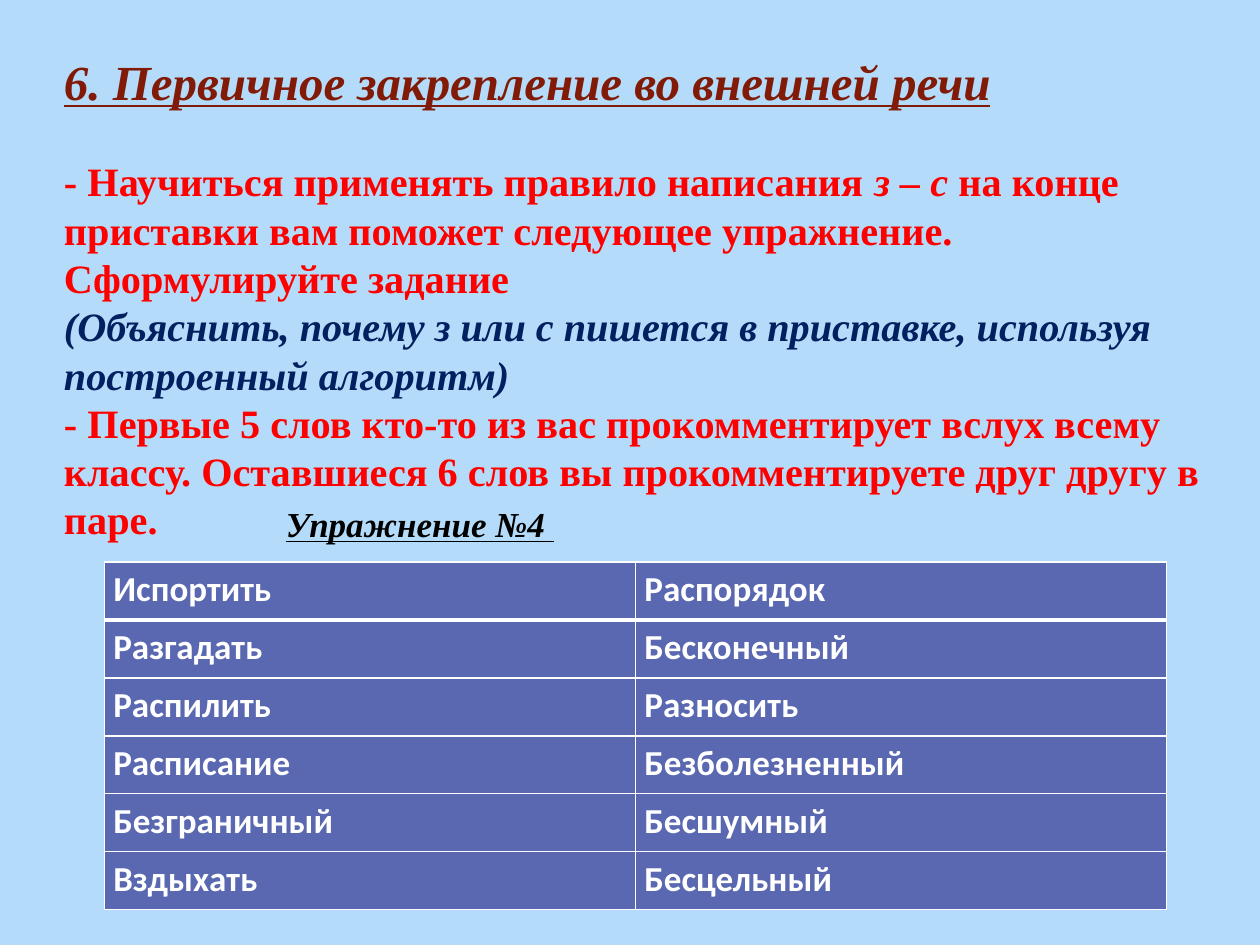
"""Build the slide on practising the spelling of prefixes ending in з and с."""
from typing import NamedTuple

from lxml import etree
from pptx import Presentation
from pptx.dml.color import RGBColor
from pptx.enum import text
from pptx.oxml.ns import qn
from pptx.util import Inches, Pt

COLORS = {
    "background": "B4DCFA",
    "heading": "821A08",
    "speech": "FF0000",
    "answer": "002060",
    "label": "000000",
    "cell": "5968B0",
    "white": "FFFFFF",
}
SERIF = "Times New Roman"


class Passage(NamedTuple):
    phrases: tuple[str, ...]
    color: str
    size: int = 23
    italic: bool = False
    underline: bool = False
    after: float = 0


class Box(NamedTuple):
    left: float
    top: float
    width: float
    height: float
    passages: tuple[Passage, ...]


LESSON = Box(0.41, 0.36, 9.37, 4.06, (
    Passage(("6. Первичное закрепление во внешней речи",), "heading", 28, True, True, 26.5),
    Passage((
        "- Научиться применять правило написания ",
        "з – с",
        " на конце приставки вам поможет следующее упражнение. Сформулируйте задание",
    ), "speech"),
    Passage((
        "(Объяснить, почему з или с пишется в приставке, используя построенный алгоритм)",
    ), "answer", italic=True),
    Passage((
        "- Первые 5 слов кто-то из вас прокомментирует вслух всему классу. "
        "Оставшиеся 6 слов вы прокомментируете друг другу в паре.",
    ), "speech"),
))
EXERCISE = Box(2.17, 3.94, 2.92, 0.77, (
    Passage(("Упражнение №4 ",), "label", 20, True, True),
))
WORDS = (
    ("Испортить", "Распорядок"),
    ("Разгадать", "Бесконечный"),
    ("Распилить", "Разносить"),
    ("Расписание", "Безболезненный"),
    ("Безграничный", "Бесшумный"),
    ("Вздыхать", "Бесцельный"),
)


def rgb(name: str) -> RGBColor:
    """Return the named colour."""
    return RGBColor.from_string(COLORS[name])


def set_font(font, face: str, size: int, color: str) -> None:
    """Apply a bold face, size and colour."""
    font.name, font.size, font.bold = face, Pt(size), True
    font.color.rgb = rgb(color)


def add_passages(slide, box: Box) -> None:
    """Add a text box; every second phrase of a passage switches its slant."""
    frame = slide.shapes.add_textbox(
        *(Inches(length) for length in (box.left, box.top, box.width, box.height))
    ).text_frame
    frame.word_wrap = True
    for index, passage in enumerate(box.passages):
        paragraph = frame.add_paragraph() if index else frame.paragraphs[0]
        paragraph.space_after = Pt(passage.after)
        set_font(paragraph.font, SERIF, passage.size, passage.color)
        paragraph.font.italic = passage.italic
        paragraph.font.underline = passage.underline
        for number, phrase in enumerate(passage.phrases):
            run = paragraph.add_run()
            run.text = phrase
            if number % 2:
                run.font.italic = not passage.italic


def set_borders(cell, top: int, bottom: int) -> None:
    """Draw white cell borders ahead of the cell fill."""
    properties = cell._tc.get_or_add_tcPr()
    for index, (side, width) in enumerate(zip("LRTB", (1, 1, top, bottom))):
        line = etree.Element(qn(f"a:ln{side}"), w=str(Pt(width)))
        fill = etree.SubElement(line, qn("a:solidFill"))
        etree.SubElement(fill, qn("a:srgbClr"), val=COLORS["white"])
        properties.insert(index, line)


def add_words(slide) -> None:
    """Add the table of words to explain."""
    table = slide.shapes.add_table(
        len(WORDS), 2, Inches(0.83), Inches(4.46), Inches(8.43), Inches(2.76)
    ).table
    for row, pair in enumerate(WORDS):
        for column, word in enumerate(pair):
            cell = table.cell(row, column)
            cell.margin_left = cell.margin_right = Inches(0.07)
            cell.margin_top = cell.margin_bottom = 0
            cell.fill.solid()
            cell.fill.fore_color.rgb = rgb("cell")
            set_borders(cell, 3 if row == 1 else 1, 3 if row == 0 else 1)
            cell.text = word
            paragraph = cell.text_frame.paragraphs[0]
            paragraph.alignment = text.PP_ALIGN.JUSTIFY
            paragraph.line_spacing = 1.15
            set_font(paragraph.font, "Calibri", 20, "white")


def main() -> None:
    """Build and save the slide."""
    deck = Presentation()
    deck.slide_width, deck.slide_height = Inches(10), Inches(7.5)
    slide = deck.slides.add_slide(deck.slide_layouts[6])
    slide.background.fill.solid()
    slide.background.fill.fore_color.rgb = rgb("background")
    add_passages(slide, LESSON)
    add_words(slide)
    add_passages(slide, EXERCISE)
    deck.save("out.pptx")


if __name__ == "__main__":
    main()
